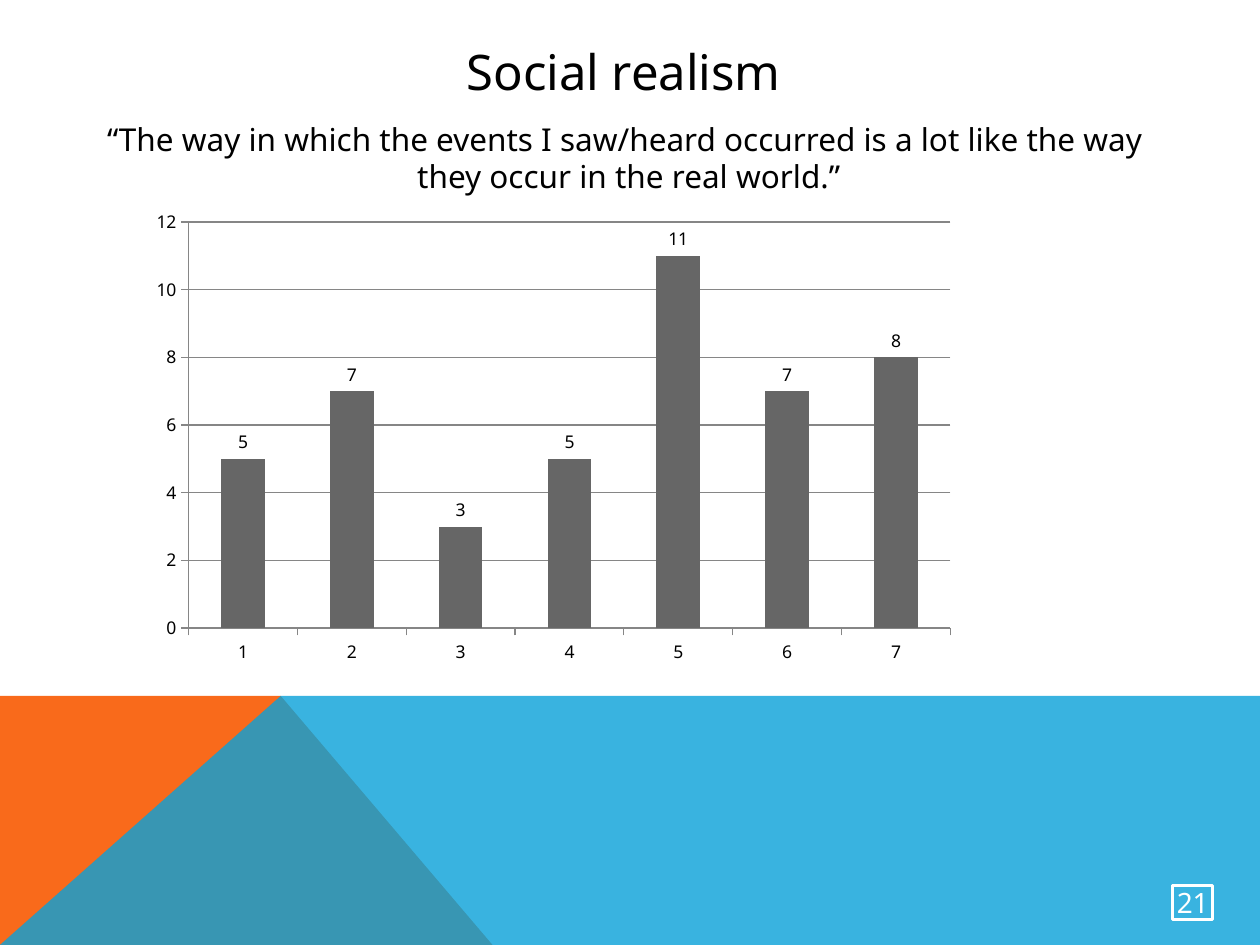
from lxml import etree
from pptx import Presentation
from pptx import util as u
from pptx.chart import data as chart_data
from pptx.dml.color import RGBColor
from pptx.enum import chart as ch, shapes, text
from pptx.oxml import parse_xml
from pptx.oxml.ns import nsdecls, qn

WIDTH, HEIGHT = 25.4, 19.05
HORIZON, PEAK, FOOT = 14.03, 5.66, 9.93


def paint(target, hex_color):
    target.solid()
    target.fore_color.rgb = RGBColor.from_string(hex_color)


def style_font(font, name, size, color):
    font.name, font.size = name, u.Pt(size)
    paint(font.fill, color)


def write(shape, lines, font="Noto Sans", size=18, color="000000", spacing=1.0,
          anchor=text.MSO_ANCHOR.TOP, inset=0.1, wrap=False,
          fit=text.MSO_AUTO_SIZE.NONE):
    frame = shape.text_frame
    frame.auto_size = fit
    frame.word_wrap, frame.vertical_anchor = wrap, anchor
    frame.margin_left = frame.margin_right = u.Cm(inset)
    frame.margin_top = frame.margin_bottom = u.Cm(inset)
    for index, line in enumerate(lines):
        paragraph = frame.add_paragraph() if index else frame.paragraphs[0]
        paragraph.alignment = text.PP_ALIGN.CENTER
        paragraph.line_spacing = spacing
        paragraph.space_before = paragraph.space_after = u.Pt(0)
        run = paragraph.add_run()
        run.text = line
        style_font(run.font, font, size, color)


class Deck:
    font = "Noto Sans"
    ink, bar, rule, white = "000000", "666666", "868686", "FFFFFF"

    def __init__(self):
        self.presentation = Presentation()
        self.presentation.slide_width = u.Cm(WIDTH)
        self.presentation.slide_height = u.Cm(HEIGHT)
        self.slide = self.presentation.slides.add_slide(self.presentation.slide_layouts[5])

    def title(self, wording, box):
        heading = self.slide.shapes.title
        heading.left, heading.top, heading.width, heading.height = map(u.Cm, box)
        write(heading, [wording], self.font, 28, self.ink, spacing=0.95,
              anchor=text.MSO_ANCHOR.MIDDLE, wrap=True)

    def quote(self, lines, box):
        quote = self.slide.shapes.add_textbox(*map(u.Cm, box))
        write(quote, lines, self.font, 18, self.ink,
              fit=text.MSO_AUTO_SIZE.SHAPE_TO_FIT_TEXT)

    def polygon(self, points, color, opacity=100):
        corners = [(u.Cm(x), u.Cm(y)) for x, y in points]
        builder = self.slide.shapes.build_freeform(*corners[0])
        builder.add_line_segments(corners[1:])
        polygon = builder.convert_to_shape()
        polygon.shadow.inherit = False
        paint(polygon.fill, color)
        polygon.line.fill.background()
        if opacity < 100:
            fill_color = polygon.fill._xPr.find(qn("a:solidFill"))[0]
            etree.SubElement(fill_color, qn("a:alpha")).set("val", str(opacity * 1000))

    def page_number(self, number, box):
        frame = self.slide.shapes.add_shape(shapes.MSO_SHAPE.RECTANGLE, *map(u.Cm, box))
        frame.shadow.inherit = False
        frame.fill.background()
        paint(frame.line.fill, self.white)
        frame.line.width = u.Pt(1.5)
        write(frame, [number], self.font, 16, self.white,
              anchor=text.MSO_ANCHOR.MIDDLE, inset=0)

    def columns(self, categories, values, box, plot_area):
        counts = chart_data.CategoryChartData(number_format="General")
        counts.categories = categories
        counts.add_series("Series 1", values)
        chart = self.slide.shapes.add_chart(
            ch.XL_CHART_TYPE.COLUMN_CLUSTERED, *map(u.Cm, box), counts).chart
        chart.has_legend = chart.has_title = False
        style_font(chart.font, self.font, 10, self.ink)

        for axis in (chart.category_axis, chart.value_axis):
            axis.major_tick_mark = ch.XL_TICK_MARK.OUTSIDE
            self.hairline(axis.format.line)
        scale = chart.value_axis
        scale.minimum_scale, scale.maximum_scale, scale.major_unit = 0, 12, 2
        scale.has_major_gridlines = True
        self.hairline(scale.major_gridlines.format.line)

        plot = chart.plots[0]
        plot.gap_width, plot.vary_by_categories = 150, False
        paint(plot.series[0].format.fill, self.bar)
        plot.has_data_labels = True
        labels = plot.data_labels
        labels.show_value = True
        labels.position = ch.XL_LABEL_POSITION.OUTSIDE_END
        style_font(labels.font, self.font, 10, self.ink)
        chart_width, chart_height = box[2:]
        self.place_plot(chart, [length / whole for length, whole in
                                zip(plot_area, (chart_width, chart_height) * 2)])

    def hairline(self, line):
        paint(line.fill, self.rule)
        line.width = u.Pt(0.75)

    def place_plot(self, chart, shares):
        sides = "".join(f'<c:{side}Mode val="edge"/>' for side in "xy")
        sides += "".join(f'<c:{side} val="{share}"/>' for side, share in zip("xywh", shares))
        layout = parse_xml(
            f'<c:layout {nsdecls("c")}><c:manualLayout><c:layoutTarget val="inner"/>'
            f'{sides}</c:manualLayout></c:layout>')
        area = chart.element.find(".//" + qn("c:plotArea"))
        for existing in area.findall(qn("c:layout")):
            area.remove(existing)
        area.insert(0, layout)


def main():
    deck = Deck()
    deck.polygon([(0, HEIGHT), (0, HORIZON), (PEAK, HORIZON), (FOOT, HEIGHT)], "F96A1B")
    deck.polygon([(0, HEIGHT), (PEAK, HORIZON), (WIDTH, HORIZON), (WIDTH, HEIGHT)],
                 "08A1D9", opacity=80)
    deck.page_number("21", (23.64, 17.85, 0.81, 0.69))
    deck.title("Social realism ", (2.25, -0.3, 20.9, 3.56))
    deck.quote(["“The way in which the events I saw/heard occurred is a lot like the way ",
                "they occur in the real world.”"], (1.55, 2.31, 22.25, 1.7))
    deck.columns([str(score) for score in range(1, 8)], (5, 7, 3, 5, 11, 7, 8),
                 (2.97, 4.24, 17.98, 9.53), (0.83, 0.22, 15.36, 8.2))
    deck.presentation.save("out.pptx")


if __name__ == "__main__":
    main()
